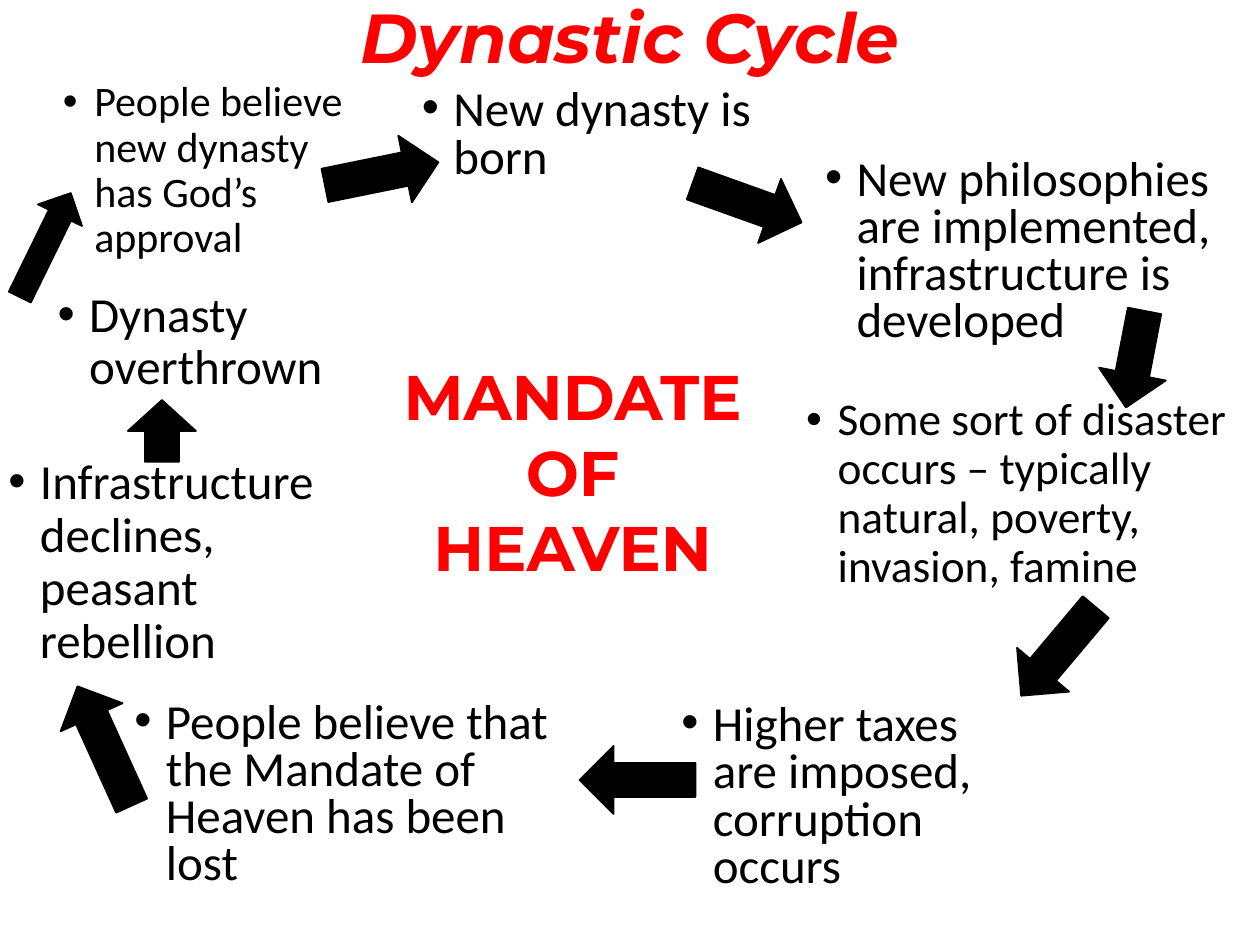
from dataclasses import dataclass

from lxml import etree
from pptx import Presentation
from pptx.dml.color import RGBColor
from pptx.enum.shapes import MSO_SHAPE
from pptx.enum.text import MSO_ANCHOR, PP_ALIGN
from pptx.oxml.ns import qn
from pptx.util import Pt

ARROW = MSO_SHAPE.RIGHT_ARROW
CENTER = PP_ALIGN.CENTER
LEFT = PP_ALIGN.LEFT
MIDDLE = MSO_ANCHOR.MIDDLE
TOP = MSO_ANCHOR.TOP


@dataclass(frozen=True)
class Theme:
    heading_font: str = "Montserrat"
    body_font: str = "Calibri"
    red: RGBColor = RGBColor(0xFF, 0, 0)
    black: RGBColor = RGBColor(0, 0, 0)
    title_size: float = 39.6
    mandate_size: float = 36
    stage_size: float = 28
    disaster_size: float = 25.9
    approval_size: float = 24
    bullet_indent: float = 18
    arrow_line: float = 1


THEME = Theme()

# Stages, clockwise: text, (left, top, width, height), size, line spacing
STAGES = [
    ("New dynasty is born",
     (234, 47.5, 203, 66), THEME.stage_size, 0.8),
    ("New philosophies are implemented, infrastructure is developed",
     (464.4, 87.1, 266.4, 122.4), THEME.stage_size, 0.8),
    ("Some sort of disaster occurs – typically natural, poverty, invasion, famine",
     (453.6, 223.2, 266.4, 122.4), THEME.disaster_size, 0.9),
    ("Higher taxes are imposed, corruption occurs",
     (382.3, 398.9, 211, 121.7), THEME.stage_size, 0.8),
    ("People believe that the Mandate of Heaven has been lost",
     (69.8, 397.4, 266.4, 122.4), THEME.stage_size, 0.8),
    ("Infrastructure declines, peasant rebellion",
     (-2.2, 257.8, 218.2, 133.9), THEME.stage_size, 0.9),
    ("Dynasty overthrown",
     (25.9, 162, 167.8, 82), THEME.stage_size, 0.9),
    ("People believe new dynasty has God’s approval",
     (28.8, 42.5, 189.4, 100), THEME.approval_size, 0.9),
]

# Arrows, clockwise: (left, top, width, height) before turning, angle
STEPS = [
    ((393.8, 96.5, 66.2, 38.9), 19.7),
    ((620.6, 185.8, 56.2, 38.9), 100.9),
    ((571.7, 352.8, 66.2, 38.9), 130.1),
    ((331.2, 426.2, 66.2, 38.9), 180),
    ((22.3, 406.8, 74.9, 38.9), 245.6),
    ((74.9, 226.8, 35.3, 38.9), 270),
    ((-7.2, 126, 66.2, 28.1), 296.1),
    ((185, 79.9, 66.2, 38.9), 348.5),
]


def in_points(box):
    return [Pt(length) for length in box]


def add_bullet(paragraph):
    properties = paragraph._p.get_or_add_pPr()
    indent = Pt(THEME.bullet_indent)
    properties.set("marL", str(indent))
    properties.set("indent", str(-indent))
    etree.SubElement(properties, qn("a:buFont")).set("typeface", "Arial")
    etree.SubElement(properties, qn("a:buChar")).set("char", "•")


def add_text(slide, text, box, size, font, color, spacing=1.0, align=LEFT,
             anchor=TOP, bold=False, italic=False, bullet=False):
    frame = slide.shapes.add_textbox(*in_points(box)).text_frame
    frame.word_wrap = True
    frame.vertical_anchor = anchor
    paragraph = frame.paragraphs[0]
    if bullet:
        add_bullet(paragraph)
    paragraph.alignment = align
    paragraph.line_spacing = spacing
    run = paragraph.add_run()
    run.text = text
    run.font.name = font
    run.font.size = Pt(size)
    run.font.bold = bold
    run.font.italic = italic
    run.font.color.rgb = color


def add_stage(slide, text, box, size, spacing):
    add_text(slide, text, box, size, THEME.body_font, THEME.black,
             spacing=spacing, bullet=True)


def add_step_arrow(slide, box, angle):
    step = slide.shapes.add_shape(ARROW, *in_points(box))
    step.rotation = angle
    step.shadow.inherit = False
    step.fill.solid()
    step.fill.fore_color.rgb = THEME.black
    step.line.color.rgb = THEME.black
    step.line.width = Pt(THEME.arrow_line)


def main():
    deck = Presentation()
    deck.slide_width, deck.slide_height = Pt(720), Pt(540)
    slide = deck.slides.add_slide(deck.slide_layouts[6])

    # Title
    add_text(slide, "Dynastic Cycle", (0, 0, 720, 47.5), THEME.title_size,
             THEME.heading_font, THEME.red, spacing=0.9, align=CENTER,
             anchor=MIDDLE, bold=True, italic=True)

    # Cycle of stages and the arrows between them
    for stage in STAGES:
        add_stage(slide, *stage)
    for step in STEPS:
        add_step_arrow(slide, *step)

    # Centre of the cycle
    add_text(slide, "MANDATE OF HEAVEN", (217.4, 200.9, 219.6, 138.2),
             THEME.mandate_size, THEME.heading_font, THEME.red,
             align=CENTER, bold=True)

    deck.save("out.pptx")


if __name__ == "__main__":
    main()
